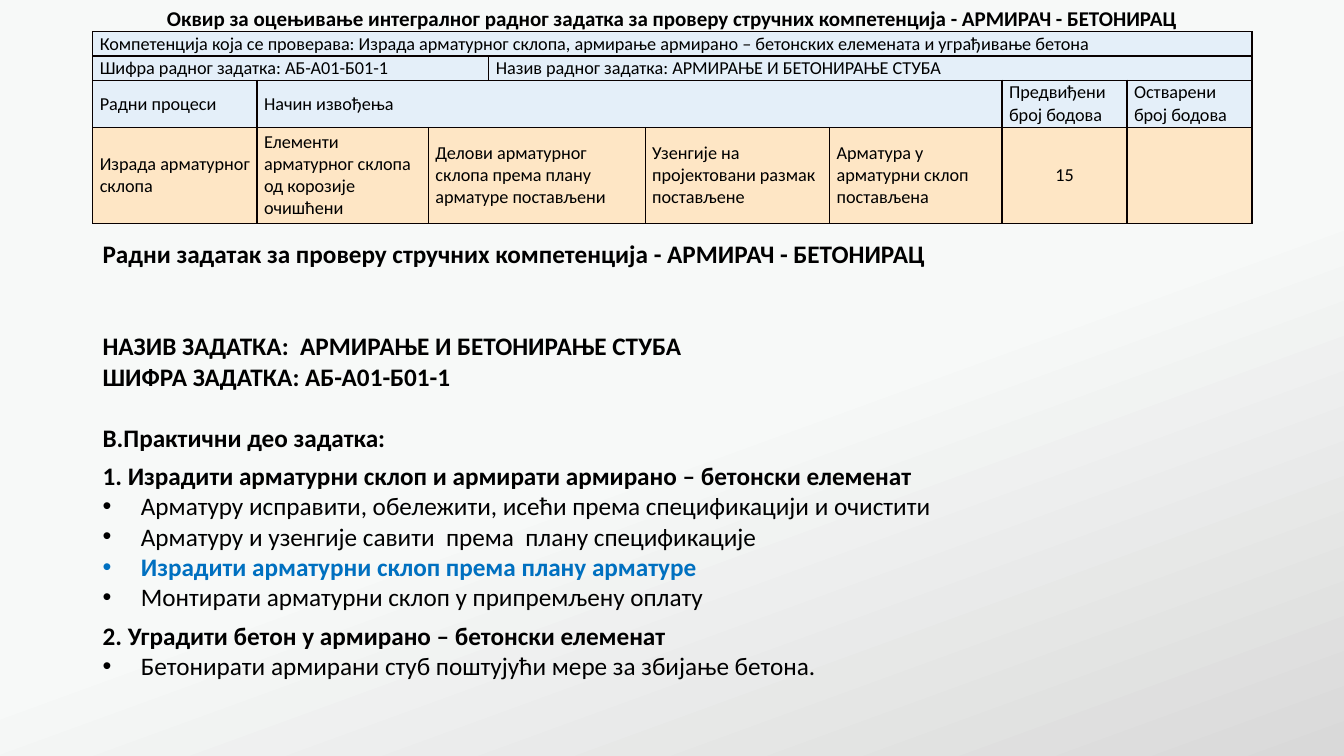
from dataclasses import dataclass

from lxml import etree
from pptx import Presentation
from pptx.dml.color import RGBColor
from pptx.enum.text import MSO_ANCHOR, MSO_AUTO_SIZE, PP_ALIGN
from pptx.oxml.ns import qn
from pptx.util import Inches, Pt

MIDDLE = MSO_ANCHOR.MIDDLE
GROW = MSO_AUTO_SIZE.SHAPE_TO_FIT_TEXT
LEFT, CENTER = PP_ALIGN.LEFT, PP_ALIGN.CENTER

WIDE, HIGH = Inches(13.33), Inches(7.5)
FONT = "Calibri"
COLORS = {
    "ink": "000000", "line": "080000", "mark": "0070C0",
    "head": "DBEBFA", "task": "FEE6C5",
    "dark": "D9D9D9", "light": "F7F9F8",
}

# Lengths in percent of the slide's width or height
EDGE = 6.9
COLS = [12.23, 12.75, 4.5, 11.63, 13.73, 12.83, 9.3, 9.3]
ROWS = [3.33, 3.2, 3.2, 6.27, 12.67]
HANG = 2.85
LINE = 22  # height of one text line in points


@dataclass
class Cell:
    text: str
    span: int = 1
    align: PP_ALIGN = LEFT


@dataclass
class Band:
    cells: list[Cell]
    fill: str = "head"
    alpha: int = 68
    size: int = 13
    bold: bool = False
    sides: str = "LRTB"


@dataclass
class Item:
    text: str
    bold: bool = True
    color: str = "ink"
    after: int = 0
    hang: bool = False
    dot: bool = False


BANDS = [
    Band([Cell("Оквир за оцењивање интегралног радног задатка за проверу стручних "
               "компетенција - АРМИРАЧ - БЕТОНИРАЦ", 8, CENTER)],
         fill="", size=15, bold=True, sides="B"),
    Band([Cell("Компетенција која се проверава: Израда арматурног склопа, армирање "
               "армирано – бетонских елемената и уграђивање бетона", 8)]),
    Band([Cell("Шифра радног задатка: АБ-А01-Б01-1", 3),
          Cell("Назив радног задатка: АРМИРАЊЕ И БЕТОНИРАЊЕ СТУБА", 5)]),
    Band([Cell("Радни процеси"), Cell("Начин извођења", 5),
          Cell("Предвиђени број бодова"), Cell("Остварени број бодова")]),
    Band([Cell("Израда арматурног склопа"),
          Cell("Елементи арматурног склопа од корозије очишћени"),
          Cell("Делови арматурног склопа према плану арматуре постављени", 2),
          Cell("Узенгије на пројектовани размак постављене"),
          Cell("Арматура у арматурни склоп постављена"),
          Cell("15", align=CENTER), Cell("")],
         fill="task", alpha=100),
]


def step(text: str, bold: bool = False, color: str = "ink", after: int = 0) -> Item:
    return Item(text, bold, color, after, hang=True, dot=True)


ITEMS = [
    Item("Радни задатак за проверу стручних компетенција - АРМИРАЧ - БЕТОНИРАЦ",
         after=2 * LINE),
    Item("НАЗИВ ЗАДАТКА:  АРМИРАЊЕ И БЕТОНИРАЊЕ СТУБА"),
    Item("ШИФРА ЗАДАТКА: АБ-А01-Б01-1", after=LINE),
    Item("B.Практични део задатка:", after=6),
    Item("1. Израдити арматурни склоп и армирати армирано – бетонски елеменат"),
    step("Арматуру исправити, обележити, исећи према спецификацији и очистити"),
    step("Арматуру и узенгије савити  према  плану спецификације"),
    step("Израдити арматурни склоп према плану арматуре", True, "mark"),
    step("Монтирати арматурни склоп у припремљену оплату", after=6),
    Item("2. Уградити бетон у армирано – бетонски елеменат", hang=True),
    step("Бетонирати армирани стуб поштујући мере за збијање бетона."),
]


def wide(part: float) -> int:
    return round(WIDE * part / 100)


def high(part: float) -> int:
    return round(HIGH * part / 100)


def hue(name: str) -> RGBColor:
    return RGBColor.from_string(COLORS[name])


def style(para, size: int, bold: bool, color: str = "ink") -> None:
    for run in para.runs:
        run.font.name, run.font.size, run.font.bold = FONT, Pt(size), bold
        run.font.color.rgb = hue(color)


def rule(cell, sides: str) -> None:
    """Draw the named borders and clear the others."""
    props = cell._tc.get_or_add_tcPr()
    for side in "LRTB":
        line = etree.SubElement(props, qn(f"a:ln{side}"), w=str(Pt(1)))
        if side in sides:
            fill = etree.SubElement(line, qn("a:solidFill"))
            etree.SubElement(fill, qn("a:srgbClr"), val=COLORS["line"])
        else:
            etree.SubElement(line, qn("a:noFill"))


def paint(cell, name: str, alpha: int) -> None:
    if not name:
        cell.fill.background()
        return
    cell.fill.solid()
    cell.fill.fore_color.rgb = hue(name)
    if alpha < 100:
        color = cell._tc.tcPr.find(f"{qn('a:solidFill')}/{qn('a:srgbClr')}")
        etree.SubElement(color, qn("a:alpha"), val=str(alpha * 1000))


def add_back(slide) -> None:
    fill = slide.background.fill
    fill.gradient()
    fill.gradient_angle = 110
    for stop, name, place in zip(fill.gradient_stops, ("dark", "light"), (0, 0.45)):
        stop.color.rgb, stop.position = hue(name), place


def add_grid(slide) -> None:
    table = slide.shapes.add_table(
        len(ROWS), len(COLS), wide(EDGE), high(0.8),
        wide(sum(COLS)), high(sum(ROWS))).table
    table.first_row = table.horz_banding = False
    for col, part in zip(table.columns, COLS):
        col.width = wide(part)
    for row, part in zip(table.rows, ROWS):
        row.height = high(part)
    for top, band in enumerate(BANDS):
        for cell in table.rows[top].cells:
            rule(cell, band.sides)
            paint(cell, band.fill, band.alpha)
            cell.margin_left = cell.margin_right = Inches(0.07)
            cell.margin_top = cell.margin_bottom = 0
            cell.vertical_anchor = MIDDLE
            cell.text_frame.paragraphs[0].font.size = Pt(band.size)
        left = 0
        for data in band.cells:
            cell = table.cell(top, left)
            if data.span > 1:
                cell.merge(table.cell(top, left + data.span - 1))
            cell.text_frame.text = data.text
            para = cell.text_frame.paragraphs[0]
            para.alignment = data.align
            style(para, band.size, band.bold)
            left += data.span


def add_list(slide) -> None:
    frame = slide.shapes.add_textbox(
        wide(EDGE), high(30.93), wide(63.47), high(64.13)).text_frame
    frame.word_wrap, frame.auto_size = False, GROW
    frame.text = "\n".join(item.text for item in ITEMS)
    for para, item in zip(frame.paragraphs, ITEMS):
        para.alignment = LEFT
        para.space_after = Pt(item.after)
        style(para, 18, item.bold, item.color)
        props = para._p.get_or_add_pPr()
        if item.hang:
            props.set("marL", str(wide(HANG)))
            props.set("indent", str(-wide(HANG)))
        if item.dot:
            etree.SubElement(props, qn("a:buFont"), typeface="Arial")
            etree.SubElement(props, qn("a:buChar"), char="•")


def main() -> None:
    deck = Presentation()
    deck.slide_width, deck.slide_height = WIDE, HIGH
    slide = deck.slides.add_slide(deck.slide_layouts[6])
    add_back(slide)
    add_grid(slide)
    add_list(slide)
    deck.save("out.pptx")


if __name__ == "__main__":
    main()
